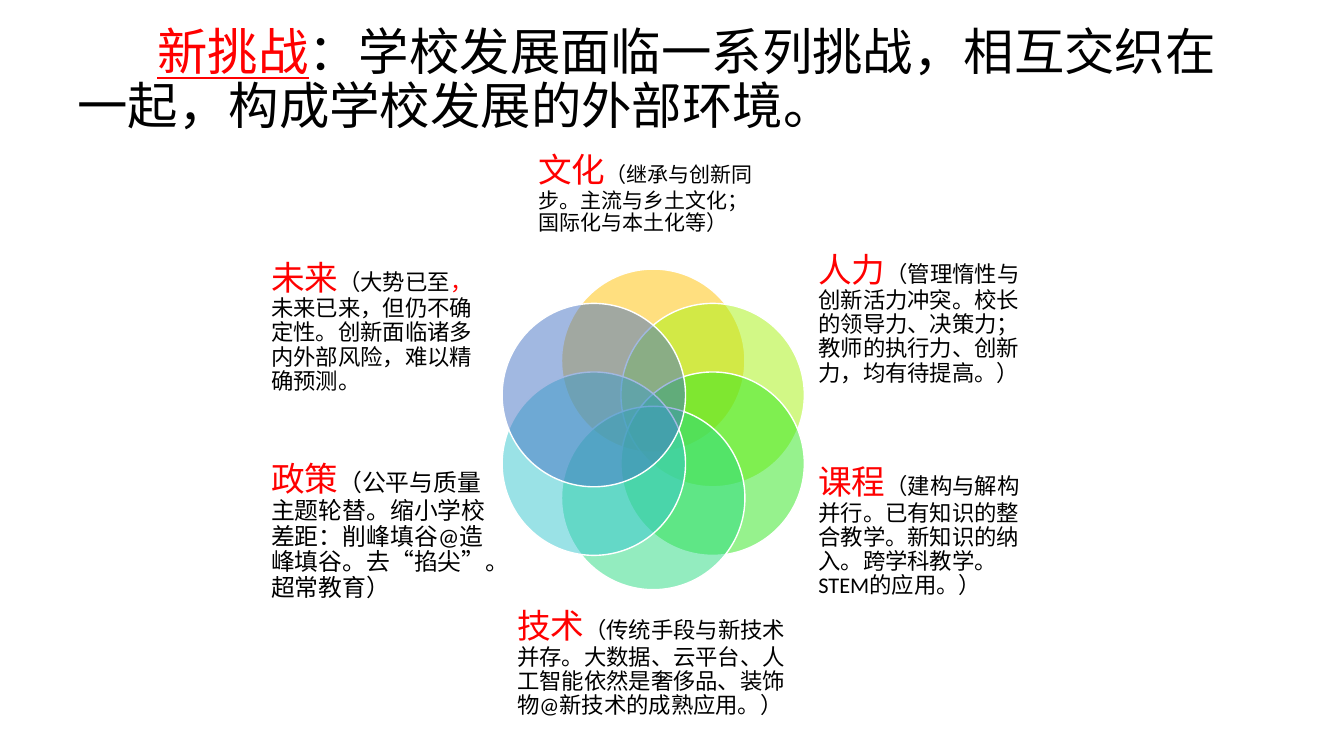
import math
import pptx
import pptx.util
import pptx.dml.color
import pptx.enum.shapes
import pptx.enum.text
import pptx.oxml

Pt = pptx.util.Pt
RGB = pptx.dml.color.RGBColor
RED = RGB(0xFF, 0, 0)
BLACK = RGB(0, 0, 0)
WHITE = RGB(0xFF, 0xFF, 0xFF)
GOLD = RGB(0xFF, 0xC0, 0)
LIME = RGB(0xA7, 0xF3, 0x0E)
GREEN = RGB(0x2E, 0xE7, 0x1C)
MINT = RGB(0x29, 0xDB, 0x80)
TEAL = RGB(0x37, 0xC6, 0xCF)
BLUE = RGB(0x44, 0x72, 0xC4)

HEAD = ("新挑战", "：学校发展面临一系列挑战，相互交织在一起，构成学校发展的外部环境。")
LEFT, RIGHT, UPPER, LOWER, SIDE = 193.7, 584.6, 179.3, 325.4, 155.5
PETALS = [
    (GOLD, "文化", 15, [("（继承与创新同步。主流与乡土文化；国际化与本土化等）", BLACK)],
     (384.5, 94.3, 164.2, 89.3)),
    (LIME, "人力", 16, [("（管理惰性与创新活力冲突。校长的领导力、决策力；教师的执行力、创新力，均有待提高。）", BLACK)],
     (RIGHT, UPPER, SIDE, 97.9)),
    (GREEN, "课程", 16, [("（建构与解构并行。已有知识的整合教学。新知识的纳入。跨学科教学。STEM的应用。）", BLACK)],
     (RIGHT, LOWER, SIDE, 109.4)),
    (MINT, "技术", 16, [("（传统手段与新技术并存。大数据、云平台、人工智能依然是奢侈品、装饰物@新技术的成熟应用。）", BLACK)],
     (369.4, 429.8, 194.4, 89.3)),
    (TEAL, "政策", 17, [("（公平与质量主题轮替。缩小学校差距：削峰填谷@造峰填谷。去“掐尖”。超常教育）", BLACK)],
     (LEFT, LOWER, SIDE, 109.4)),
    (BLUE, "未来", 16, [("（大势已至", BLACK), ("，", RED),
                      ("未来已来，但仍不确定性。创新面临诸多内外部风险，难以精确预测。", BLACK)],
     (LEFT, UPPER, SIDE, 109.4)),
]
MID_X, MID_Y, RING, SIZE = 466.6, 306.7, 49, 131


def write(para, text, size=16, color=BLACK, line=None):
    run = para.add_run()
    run.text = text
    run.font.name = "Calibri"
    run.font.size = Pt(size)
    run.font.color.rgb = color
    run.font.underline = line


def setup(frame):
    frame.word_wrap = True
    frame.auto_size = pptx.enum.text.MSO_AUTO_SIZE.NONE
    frame.vertical_anchor = pptx.enum.text.MSO_ANCHOR.MIDDLE
    para = frame.paragraphs[0]
    para.alignment = pptx.enum.text.PP_ALIGN.LEFT
    para.line_spacing = 0.9
    return para


def add_petal(slide, index, color):
    angle = math.radians(60 * index)
    left = MID_X + RING * math.sin(angle) - SIZE / 2
    top = MID_Y - RING * math.cos(angle) - SIZE / 2
    disc = slide.shapes.add_shape(pptx.enum.shapes.MSO_SHAPE.OVAL,
                                  Pt(left), Pt(top), Pt(SIZE), Pt(SIZE))
    disc.shadow.inherit = False
    disc.fill.solid()
    disc.fill.fore_color.rgb = color
    tint = disc.fill._xPr.find(".//" + pptx.oxml.ns.qn("a:srgbClr"))
    alpha = tint.makeelement(pptx.oxml.ns.qn("a:alpha"), {"val": "50000"})
    tint.append(alpha)
    disc.line.color.rgb = WHITE
    disc.line.width = Pt(1)


def add_label(slide, name, size, parts, place):
    frame = slide.shapes.add_textbox(*map(Pt, place)).text_frame
    frame.margin_left = frame.margin_right = 0
    frame.margin_top = frame.margin_bottom = 0
    para = setup(frame)
    write(para, name, size=24, color=RED)
    for text, color in parts:
        write(para, text, size=size, color=color)


def main():
    deck = pptx.Presentation()
    deck.slide_width, deck.slide_height = Pt(960), Pt(540)
    slide = deck.slides.add_slide(deck.slide_layouts[5])
    title = slide.shapes.title
    title.left, title.top, title.width, title.height = map(Pt, (48.2, 21.6, 855.4, 72.7))
    para = setup(title.text_frame)
    para._p.get_or_add_pPr().set("indent", str(Pt(57)))
    write(para, HEAD[0], size=36, color=RED, line=True)
    write(para, HEAD[1], size=36)
    for index, (color, name, size, parts, place) in enumerate(PETALS):
        add_petal(slide, index, color)
        add_label(slide, name, size, parts, place)
    deck.save("out.pptx")


if __name__ == "__main__":
    main()
